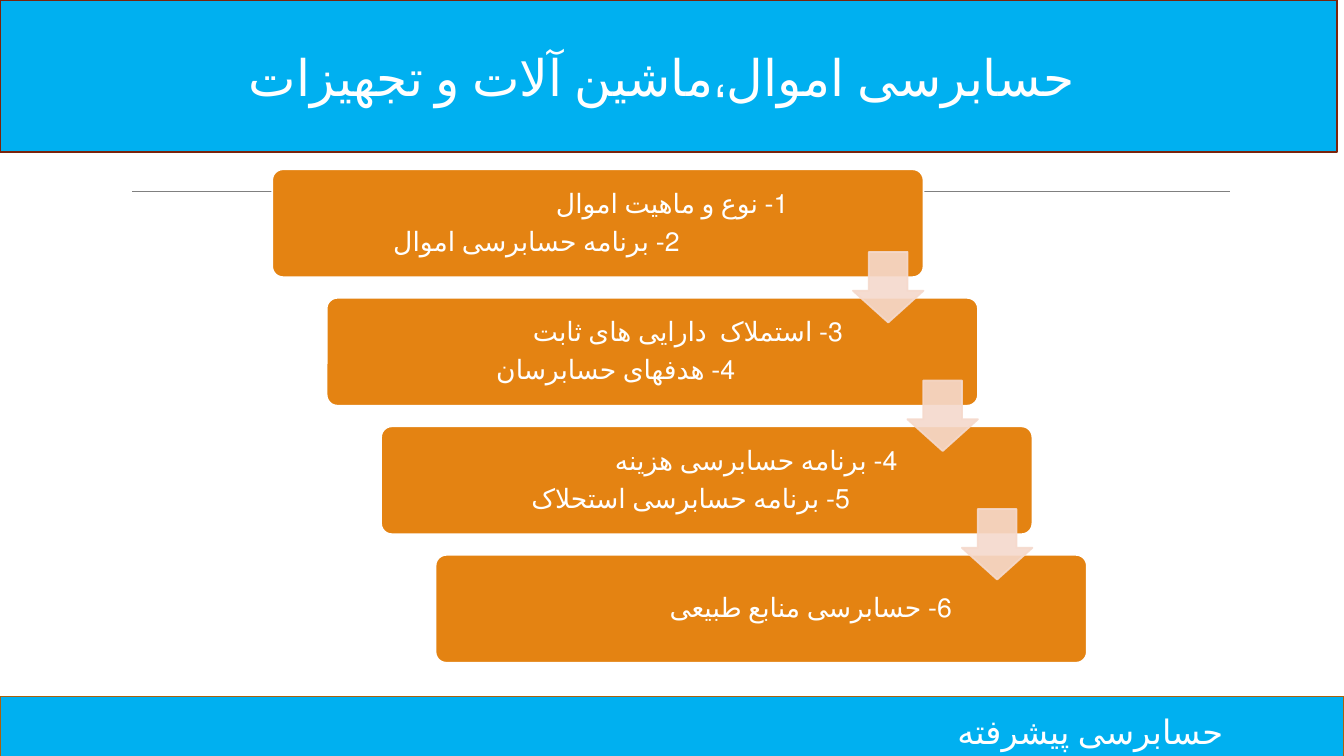
from lxml import etree
from pptx import Presentation
from pptx.dml.color import RGBColor
from pptx.enum.lang import MSO_LANGUAGE_ID
from pptx.enum.shapes import MSO_CONNECTOR, MSO_SHAPE
from pptx.enum.text import MSO_ANCHOR, PP_ALIGN
from pptx.oxml.ns import qn
from pptx.util import Inches, Pt

RECT, CARD, ARROW = MSO_SHAPE.RECTANGLE, MSO_SHAPE.ROUNDED_RECTANGLE, MSO_SHAPE.DOWN_ARROW
STRAIGHT = MSO_CONNECTOR.STRAIGHT
MIDDLE = MSO_ANCHOR.MIDDLE
CENTER, RIGHT = PP_ALIGN.CENTER, PP_ALIGN.RIGHT
FARSI = MSO_LANGUAGE_ID.FARSI

WHITE, BLUE, ORANGE, PEACH = "FFFFFF", "00B0F0", "E48312", "F5D9CC"
TITLE = "حسابرسی اموال،ماشین آلات و تجهیزات "
FOOTER = "حسابرسی پیشرفته "
STEPS = [
    [("1- نوع و ماهیت اموال", 0), ("2- برنامه حسابرسی اموال", 1.08)],
    [("3- استملاک  دارایی های ثابت", 0), ("4- هدفهای حسابرسان", 1.07)],
    [("4- برنامه حسابرسی هزینه", 0), ("5- برنامه حسابرسی استحلاک", 0.47)],
    [("6- حسابرسی منابع طبیعی", 0)],
]
CARD_X, CARD_Y, CARD_W, CARD_H = 2.7, 1.68, 6.46, 1.07
STEP_X, STEP_Y = 0.54, 1.275
ARROW_X, ARROW_Y, ARROW_SIZE = 8.46, 2.5, 0.7


def rgb(color):
    """Return the colour for a hex string."""
    return RGBColor.from_string(color)


def set_attrs(obj, values):
    """Set each attribute of an object from a dict."""
    for name, value in values.items():
        setattr(obj, name, value)


def add_box(s, kind, box, fill, line, adjustments=(), opacity=None):
    """Add a filled, outlined preset shape."""
    sp = s.shapes.add_shape(kind, *map(Inches, box))
    sp.shadow.inherit = False
    sp.fill.solid()
    sp.fill.fore_color.rgb = rgb(fill)
    sp.line.color.rgb = rgb(line)
    sp.line.width = Pt(1.25)
    for i, value in enumerate(adjustments):
        sp.adjustments[i] = value
    if opacity:
        for clr in sp._element.spPr.iter(qn("a:srgbClr")):
            etree.SubElement(clr, qn("a:alpha")).set("val", str(opacity * 1000))
    return sp


def add_text(p, text, size, font="Calibri"):
    """Add a white Persian run to a paragraph."""
    r = p.add_run()
    r.text = text
    set_attrs(r.font, {"size": Pt(size), "name": font, "language_id": FARSI})
    r.font.color.rgb = rgb(WHITE)


def add_textbox(s, box, **frame):
    """Add a wrapping text box and return its text frame."""
    tf = s.shapes.add_textbox(*map(Inches, box)).text_frame
    set_attrs(tf, {"word_wrap": True, **frame})
    return tf


def add_step(s, x, y, lines):
    """Add a card with right-to-left lines."""
    add_box(s, CARD, (x, y, CARD_W, CARD_H), ORANGE, WHITE, [0.1])
    pad = Inches(0.08)
    tf = add_textbox(s, (x, y + 0.03, 5.2, 1.02), vertical_anchor=MIDDLE, margin_left=0,
                     margin_right=pad, margin_top=pad, margin_bottom=pad)
    for i, (text, indent) in enumerate(lines):
        p = tf.add_paragraph() if i else tf.paragraphs[0]
        set_attrs(p, {"alignment": RIGHT, "line_spacing": 0.9, "space_after": Pt(6.6)})
        pPr = p._p.get_or_add_pPr()
        pPr.set("rtl", "1")
        for side in ("marL", "marR"):
            pPr.set(side, str(Inches(indent)))
        add_text(p, text, 19)


def add_rule(s, x1, x2, y):
    """Add a thin grey horizontal line."""
    line = s.shapes.add_connector(STRAIGHT, *map(Inches, (x1, y, x2, y)))
    line.line.color.rgb = rgb("808080")
    line.line.width = Pt(0.5)
    etree.SubElement(line._element.spPr, qn("a:effectLst"))


def add_title(s):
    """Add the title band."""
    tf = add_box(s, RECT, (0, 0, 13.26, 1.51), BLUE, "7A240C").text_frame
    set_attrs(tf, {"word_wrap": True, "vertical_anchor": MIDDLE})
    tf.paragraphs[0].alignment = CENTER
    add_text(tf.paragraphs[0], TITLE, 36, "League Spartan")


def add_footer(s):
    """Add the footer band and its text."""
    add_box(s, RECT, (0, 6.91, 13.33, 0.63), BLUE, "A9610D")
    p = add_textbox(s, (8.4, 7, 4.91, 0.37)).paragraphs[0]
    p.alignment = CENTER
    add_text(p, FOOTER, 24)


def main():
    """Build and save the slide."""
    prs = Presentation()
    set_attrs(prs, {"slide_width": Inches(13.33), "slide_height": Inches(7.5)})
    s = prs.slides.add_slide(prs.slide_layouts[6])
    add_rule(s, 1.31, 12.2, 1.9)
    for i, lines in enumerate(STEPS):
        add_step(s, CARD_X + i * STEP_X, CARD_Y + i * STEP_Y, lines)
    for i in range(len(STEPS) - 1):
        box = (ARROW_X + i * STEP_X, ARROW_Y + i * STEP_Y, ARROW_SIZE, ARROW_SIZE)
        add_box(s, ARROW, box, PEACH, PEACH, [0.55, 0.45], 90)
    add_footer(s)
    add_title(s)
    prs.save("out.pptx")


if __name__ == "__main__":
    main()
